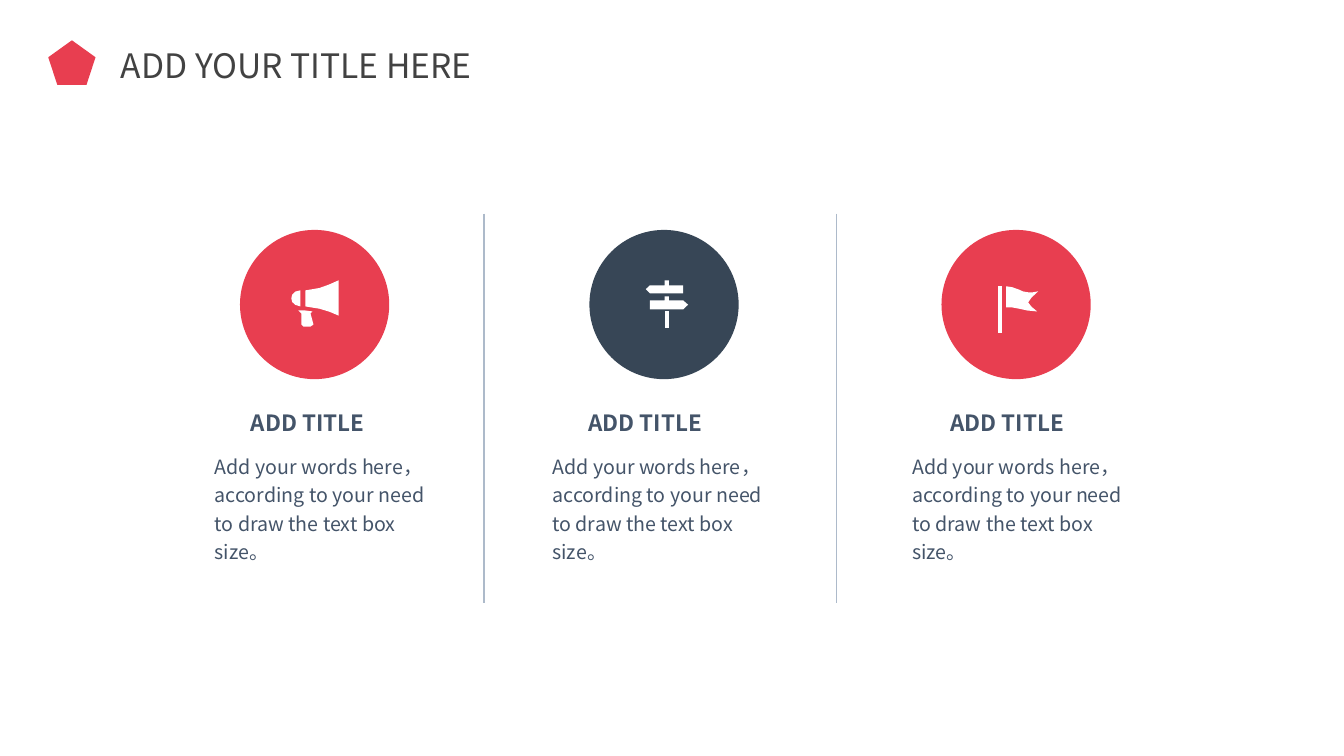
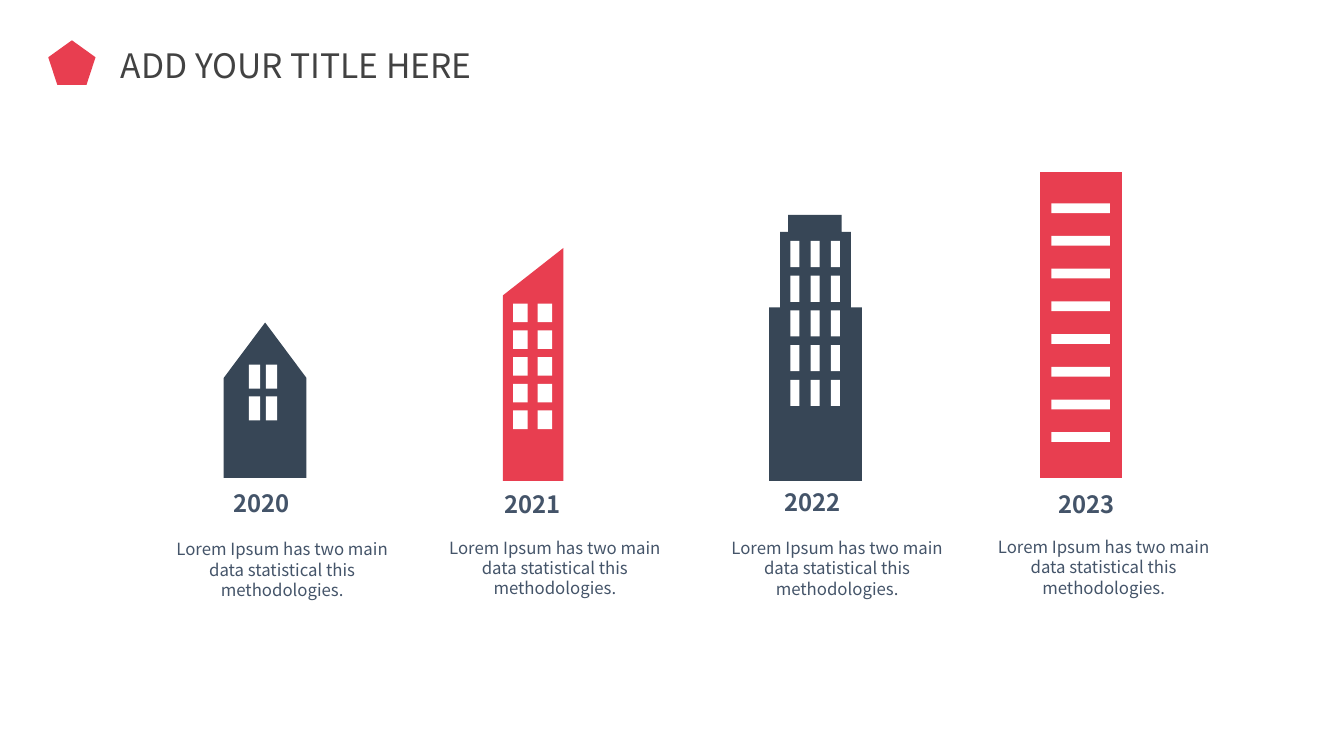
from itertools import product

from lxml.etree import SubElement
from pptx import Presentation
from pptx.dml.color import RGBColor
from pptx.enum.shapes import MSO_CONNECTOR, MSO_SHAPE
from pptx.enum.text import MSO_ANCHOR, MSO_AUTO_SIZE, PP_ALIGN
from pptx.oxml.ns import qn
from pptx.util import Pt

RED = RGBColor(0xE8, 0x3E, 0x50)
NAVY = RGBColor(0x37, 0x46, 0x56)
WHITE = RGBColor(0xFF, 0xFF, 0xFF)
TITLE_GREY = RGBColor(0x42, 0x42, 0x42)
TEXT_BLUE = RGBColor(0x44, 0x54, 0x69)
DIVIDER_GREY = RGBColor(0xAD, 0xBA, 0xCA)
FONT = "Noto Sans CJK JP"
TITLE_ONLY = 5

# Icon outlines, as points measured from the centre of their circle.
MEGAPHONE = [
    [(-6.5, 1.4), (3.5, 3), (10.5, 5.1), (17.2, 7.9),
     (17.2, -17.3), (10.5, -14.3), (3.5, -11.8), (-6.5, -10.1)],
    [(-11.6, 4.3), (-9.4, 6.4), (-9.4, 14.3), (-8, 15.8), (-2.9, 15.8),
     (-0.8, 14.3), (-2.9, 6.4), (-1.5, 5), (-6.5, 4.3)],
    [(-10.1, 1.4), (-10.1, -10.1), (-13.7, -9.2), (-16, -7),
     (-16.6, -4.4), (-16, -1.8), (-13.7, 0.3)],
]
SIGNPOST = [
    [(0.5, 5), (3.5, 5), (3.5, 16.5), (0.5, 16.5)],
    [(-13, -10.9), (-10.1, -13.7), (0.5, -13.7), (0.5, -17.3), (3.5, -17.3),
     (3.5, -13.7), (13.7, -13.7), (13.7, -8), (-10.1, -8)],
    [(-10.1, -2.9), (0.5, -2.9), (0.5, -5.8), (3.5, -5.8), (3.5, -2.9),
     (13.7, -2.9), (17.2, 0.2), (13.7, 3.5), (-10.1, 3.5)],
]
FLAG = [
    [(-13, -13), (-10.1, -13), (-10.1, 20.1), (-13, 20.1)],
    [(-7.2, -13), (-3, -12.4), (1.4, -10.9), (5, -9.3), (8.6, -8.7),
     (12, -8.7), (15.8, -9.4), (11, -4.9), (8.6, -1.5), (11, 1.6),
     (15.1, 5), (8, 4.3), (2, 3), (-2.9, 2.1), (-7.2, 2.1)],
]

# Building outlines, in slide coordinates.
HOUSE = [(218.9, 341.3), (159.8, 341.3), (159.8, 270), (189.4, 230.4),
         (218.9, 270)]
SLANTED_BLOCK = [(402.5, 177.1), (359.3, 211), (359.3, 343.5),
                 (402.5, 343.5)]
STEPPED_TOWER = [(607.7, 219.6), (607.7, 165.6), (601.2, 165.6),
                 (601.2, 153.4), (563, 153.4), (563, 165.6),
                 (557.3, 165.6), (557.3, 219.6), (549.4, 219.6),
                 (549.4, 343.4), (615.6, 343.4), (615.6, 219.6)]
SLAB = [(743, 123.1), (801.3, 123.1), (801.3, 341.3), (743, 341.3)]


def write_text(frame, text, *, size, color=TEXT_BLUE, bold=False,
               align=PP_ALIGN.LEFT, line_spacing=1.0, inset=(7.2, 3.6)):
    frame.word_wrap = True
    frame.auto_size = MSO_AUTO_SIZE.NONE
    frame.vertical_anchor = MSO_ANCHOR.TOP
    frame.margin_left = frame.margin_right = Pt(inset[0])
    frame.margin_top = frame.margin_bottom = Pt(inset[1])
    paragraph = frame.paragraphs[0]
    paragraph.alignment = align
    paragraph.line_spacing = line_spacing
    run = paragraph.add_run()
    run.text = text
    font = run.font
    font.name, font.size, font.bold = FONT, Pt(size), bold
    font.color.rgb = color
    SubElement(run._r.get_or_add_rPr(), qn("a:ea"), typeface=FONT)


class Deck:
    """Holds the shared style and the slide being drawn."""

    def __init__(self):
        self.presentation = Presentation()
        self.presentation.slide_width = Pt(960)
        self.presentation.slide_height = Pt(540)
        self.slide = None

    def add_slide(self, title):
        layout = self.presentation.slide_layouts[TITLE_ONLY]
        self.slide = self.presentation.slides.add_slide(layout)
        self.add_shape(MSO_SHAPE.REGULAR_PENTAGON, 34.5, 28.8, 33.8, 31.8, RED)
        placeholder = self.slide.shapes.title
        placeholder.left, placeholder.top = Pt(79.2), Pt(28.8)
        placeholder.width, placeholder.height = Pt(356.4), Pt(36.7)
        write_text(placeholder.text_frame, title, size=24, color=TITLE_GREY)

    def fill(self, shape, color):
        shape.shadow.inherit = False
        shape.fill.solid()
        shape.fill.fore_color.rgb = color
        shape.line.fill.background()

    def add_shape(self, kind, left, top, width, height, color):
        shape = self.slide.shapes.add_shape(
            kind, Pt(left), Pt(top), Pt(width), Pt(height))
        self.fill(shape, color)

    def add_outline(self, points, color, origin=(0, 0)):
        corners = [(Pt(origin[0] + x), Pt(origin[1] + y)) for x, y in points]
        builder = self.slide.shapes.build_freeform(*corners[0])
        builder.add_line_segments(corners[1:], close=True)
        self.fill(builder.convert_to_shape(), color)

    def add_text(self, text, left, top, width, height, **text_format):
        box = self.slide.shapes.add_textbox(
            Pt(left), Pt(top), Pt(width), Pt(height))
        write_text(box.text_frame, text, **text_format)

    def add_divider(self, x, top, bottom):
        line = self.slide.shapes.add_connector(
            MSO_CONNECTOR.STRAIGHT, Pt(x), Pt(top), Pt(x), Pt(bottom))
        line.line.color.rgb = DIVIDER_GREY
        line.line.width = Pt(1)
        SubElement(line._element.spPr, qn("a:effectLst"))

    def add_icon_circle(self, center_x, center_y, diameter, color, icon):
        radius = diameter / 2
        self.add_shape(MSO_SHAPE.OVAL, center_x - radius, center_y - radius,
                       diameter, diameter, color)
        for points in icon:
            self.add_outline(points, WHITE, (center_x, center_y))

    def add_windows(self, start, size, columns, rows, pitch):
        """Draw a grid of windows; pitch is the step across and down."""
        for row, column in product(range(rows), range(columns)):
            self.add_shape(MSO_SHAPE.RECTANGLE, start[0] + column * pitch[0],
                           start[1] + row * pitch[1], *size, WHITE)


def add_icon_slide(deck):
    deck.add_slide("ADD YOUR TITLE HERE")
    for x in (345.6, 597.6):
        deck.add_divider(x, 152.6, 430.6)
    columns = [
        (224.7, RED, MEGAPHONE, 179.3, 153.4),
        (474.3, NAVY, SIGNPOST, 420.5, 394.6),
        (725.8, RED, FLAG, 679, 651.6),
    ]
    for center_x, color, icon, heading_left, body_left in columns:
        deck.add_icon_circle(center_x, 217.5, 106.6, color, icon)
        deck.add_text("ADD TITLE", heading_left, 292.3, 102, 19.4,
                      size=16, bold=True, inset=(0, 0))
        deck.add_text("Add your words here，according to your need "
                      "to draw the text box size。", body_left, 321.8, 163.4,
                      79.2, size=14, line_spacing=1.2, inset=(0, 0))


def add_building_slide(deck):
    deck.add_slide("ADD YOUR TITLE HERE")
    buildings = [
        (HOUSE, NAVY, dict(start=(177.8, 260.4), size=(8, 17.3), columns=2,
                           rows=2, pitch=(12.2, 22.7))),
        (SLANTED_BLOCK, RED, dict(start=(366.5, 216.8), size=(10.4, 13.4),
                                  columns=2, rows=5, pitch=(17.5, 19.1))),
        (STEPPED_TOWER, NAVY, dict(start=(564.6, 172.1), size=(6.5, 18.7),
                                   columns=3, rows=5, pitch=(14.4, 24.8))),
        (SLAB, RED, dict(start=(751, 145.2), size=(41.8, 7), columns=1,
                         rows=8, pitch=(0, 23.36))),
    ]
    for outline, color, windows in buildings:
        deck.add_outline(outline, color)
        deck.add_windows(**windows)

    labels = [
        ("2020", (159.8, 345.6), (111.1, 381.6)),
        ("2021", (353.5, 346.5), (305.9, 380.5)),
        ("2022", (553, 344.9), (507.5, 380.7)),
        ("2023", (748.8, 346.3), (697.9, 380)),
    ]
    for year, year_corner, caption_corner in labels:
        deck.add_text(year, *year_corner, 67, 28, size=17, bold=True)
        deck.add_text("Lorem Ipsum has two main data statistical this "
                      "methodologies.", *caption_corner, 181, 51,
                      size=12, align=PP_ALIGN.CENTER)


def main():
    deck = Deck()
    add_icon_slide(deck)
    add_building_slide(deck)
    deck.presentation.save("out.pptx")


if __name__ == "__main__":
    main()
